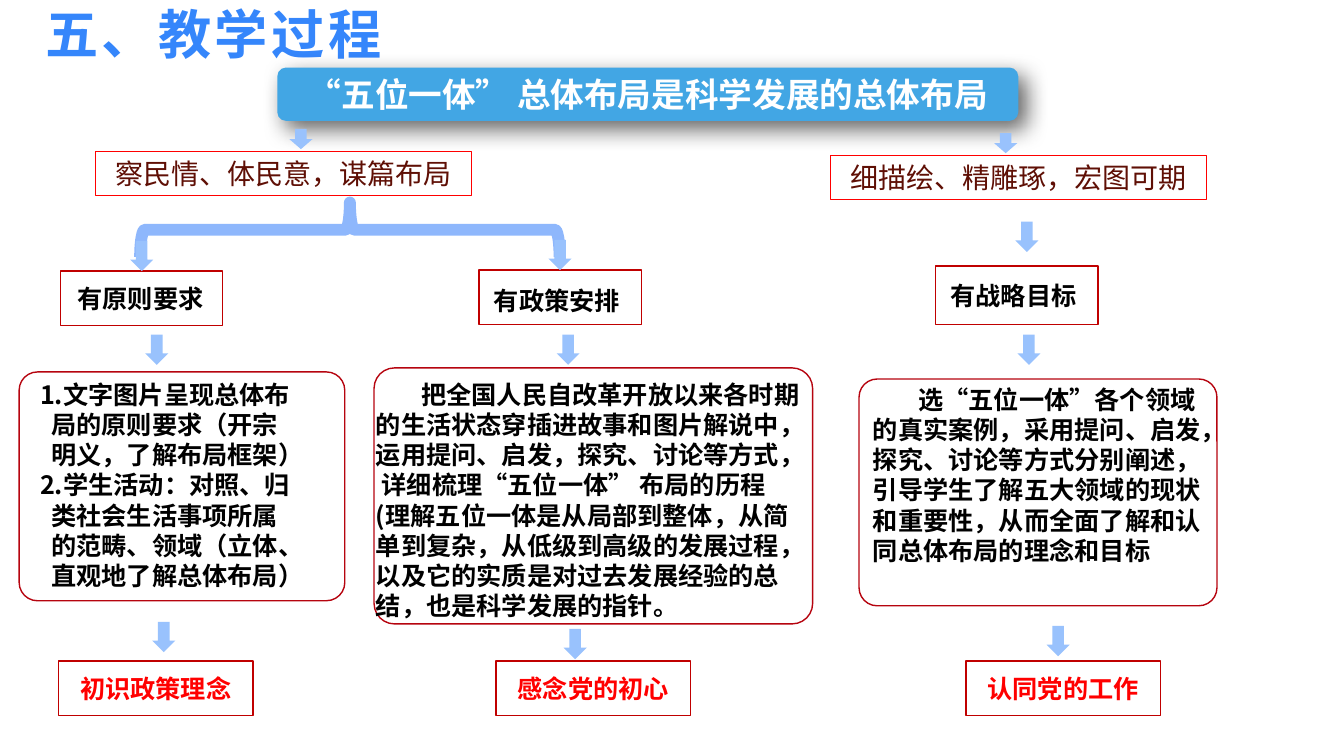
from lxml.etree import SubElement
from pptx import Presentation
from pptx.dml.color import RGBColor
from pptx.enum.shapes import MSO_SHAPE
from pptx.enum.text import MSO_ANCHOR, PP_ALIGN
from pptx.oxml.ns import qn
from pptx.util import Inches, Pt

RECT, ROUND = MSO_SHAPE.RECTANGLE, MSO_SHAPE.ROUNDED_RECTANGLE
ARROW, BRACE = MSO_SHAPE.DOWN_ARROW, MSO_SHAPE.LEFT_BRACE
MIDDLE, CENTER, LEFT = MSO_ANCHOR.MIDDLE, PP_ALIGN.CENTER, PP_ALIGN.LEFT
NOTO, ARIAL = "Noto Sans CJK SC", "Arial"
COLORS = {
    "title": "3586FB", "banner": "42A6E4", "white": "FFFFFF", "black": "000000",
    "brown": "5F0F05", "red": "FF0000", "dark": "C00000", "panel": "B6040F",
    "arrow": "99C2FD", "brace": "8EB7FC",
}
UNIT = Inches(0.1)  # grid of 133.3 columns by 75 rows


def draw(kind, place, fill=None, line=None, width=1):
    """Add a shape, or a text box if kind is None, at grid columns and rows."""
    box = [round(n * UNIT) for n in place]
    if kind is None:
        return deck.add_textbox(*box)
    shape = deck.add_shape(kind, *box)
    shape.shadow.inherit = False
    if fill:
        shape.fill.solid()
        shape.fill.fore_color.rgb = RGBColor.from_string(COLORS[fill])
    else:
        shape.fill.background()
    if line:
        shape.line.color.rgb = RGBColor.from_string(COLORS[line])
        shape.line.width = Pt(width)
    else:
        shape.line.fill.background()
    return shape


def write(shape, text, size, color, bold=True, face=NOTO, align=CENTER, left=0, first=0):
    """Fill a shape with text; left and first are paragraph indents in grid columns."""
    frame = shape.text_frame
    frame.word_wrap = True
    frame.text = text
    for para in frame.paragraphs:
        para.alignment = align
        props = para._p.get_or_add_pPr()
        props.set("marL", str(round(left * UNIT)))
        props.set("indent", str(round(first * UNIT)))
        font = para.font
        font.size, font.bold, font.name = Pt(size), bold, face
        font.color.rgb = RGBColor.from_string(COLORS[color])
        if face == NOTO:
            SubElement(props.find(qn("a:defRPr")), qn("a:ea"), typeface=face)


prs = Presentation()
prs.slide_width, prs.slide_height = Inches(13.33), Inches(7.5)
deck = prs.slides.add_slide(prs.slide_layouts[6]).shapes

# Title
title = draw(None, (3.5, -0.4, 67.1, 7.4))
write(title, "五、教学过程", 38, "title", align=LEFT)
title.text_frame.paragraphs[0]._p.pPr.find(qn("a:defRPr")).set("spc", "240")

# Two branches
for x, y, text in [(9.5, 15, "察民情、体民意，谋篇布局"), (82.4, 15.4, "细描绘、精雕琢，宏图可期")]:
    write(draw(RECT, (x, y, 37.3, 4.4), line="red", width=0.75), text, 20, "brown", bold=False)

brace = draw(BRACE, (32, 2, 5.4, 41.6), line="brace", width=8.5)
brace.rotation = 90

# Step names: box, then label
steps = [
    ((6, 26.9, 16.1, 5.4), (6.7, 27.6), "有原则要求"),
    ((47.5, 26.8, 16.1, 5.4), (48, 27.8), "有政策安排"),
    ((92.8, 26.4, 16.1, 5.8), (93.3, 27.3), "有战略目标"),
]
for place, spot, text in steps:
    draw(RECT, place, line="dark")
    write(draw(None, (*spot, 15, 4)), text, 18, "black", face=ARIAL, align=LEFT)

# Panels: frame, text area, left and first-line indents, text
panels = [
    ((1.9, 36.9, 32.3, 22.7), (3, 37.1, 29.7, 22.2), 1.1, -1.1,
     "1.文字图片呈现总体布\v局的原则要求（开宗\v明义，了解布局框架）\n"
     "2.学生活动：对照、归\v类社会生活事项所属\v的范畴、领域（立体、\v直观地了解总体布局）"),
    ((37.1, 36.5, 43.5, 25.4), (36.3, 37.1, 44, 25.2), 0, 4.5,
     "把全国人民自改革开放以来各时期的生活状态穿插进故事和图片解说中，"
     "运用提问、启发，探究、讨论等方式， 详细梳理“五位一体” 布局的历程"
     "(理解五位一体是从局部到整体，从简单到复杂，从低级到高级的发展过程，"
     "以及它的实质是对过去发展经验的总结，也是科学发展的指针。"),
    ((85.2, 37.6, 35.5, 22.5), (85.6, 37.6, 34.7, 22.2), 0, 4.5,
     "选“五位一体”各个领域的真实案例，采用提问、启发，探究、讨论等方式分别阐述，"
     "引导学生了解五大领域的现状和重要性，从而全面了解和认同总体布局的理念和目标"),
]
for place, area, left, first, text in panels:
    draw(ROUND, place, line="panel").adjustments[0] = 0.08
    write(draw(None, area), text, 18, "black", align=LEFT, left=left, first=first)

# Banner with a soft shadow
banner = draw(ROUND, (27.5, 6.7, 73.5, 5.3), fill="banner")
write(banner, "“五位一体” 总体布局是科学发展的总体布局", 24, "white")
banner.text_frame.vertical_anchor = MIDDLE
glow = SubElement(banner._element.spPr.find(qn("a:effectLst")), qn("a:outerShdw"),
                  blurRad=str(Pt(16)), dist=str(Pt(8)), dir=str(45 * 60000),
                  algn="tl", rotWithShape="0")
tint = SubElement(glow, qn("a:srgbClr"), val=COLORS["black"])
SubElement(tint, qn("a:alpha"), val="60000")

# Outcomes
for x, text in [(5.8, "初识政策理念"), (49.2, "感念党的初心"), (95.8, "认同党的工作")]:
    write(draw(RECT, (x, 65.6, 19.3, 5.4), line="dark"), text, 18, "red")

# Arrows by height
arrows = {
    2: [(28.7, 12.8), (98.6, 13.2)],
    3: [(12.9, 23.9), (54.4, 23.8), (100.7, 22),
        (14.4, 33.2), (55.2, 33.2), (100.9, 33.2),
        (15.1, 61.7), (55.9, 62.4), (103.8, 62.1)],
}
for high, spots in arrows.items():
    for x, y in spots:
        draw(ARROW, (x, y, 2.3, high), fill="arrow")

prs.save("out.pptx")
